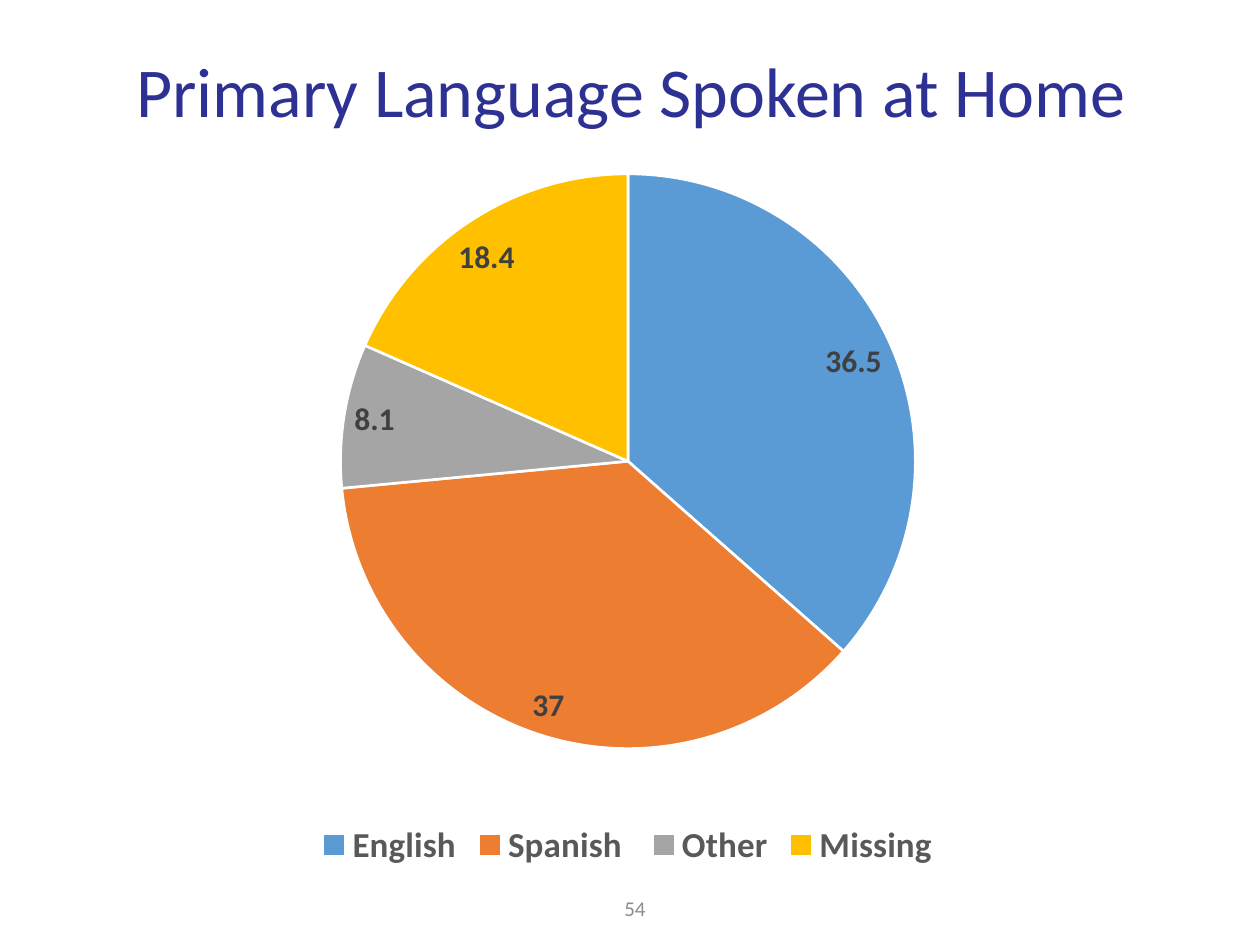
from lxml.etree import SubElement
from pptx import Presentation
from pptx.chart.data import CategoryChartData
from pptx.dml.color import RGBColor
from pptx.enum.chart import XL_CHART_TYPE, XL_LABEL_POSITION, XL_LEGEND_POSITION
from pptx.enum.text import MSO_ANCHOR, PP_ALIGN
from pptx.oxml.ns import qn
from pptx.util import Pt

PX = 914400 / 126
FONT = "Calibri"
NAVY = RGBColor(0x2D, 0x31, 0x93)
GREY = RGBColor(0x8C, 0x8C, 0x8C)
LEGEND_GREY = RGBColor(0x59, 0x59, 0x59)
LABEL_GREY = RGBColor(0x40, 0x40, 0x40)
WHITE = RGBColor(0xFF, 0xFF, 0xFF)
LANGUAGES = (
    ("English", 36.5, RGBColor(0x5B, 0x9B, 0xD5)),
    ("Spanish ", 37, RGBColor(0xED, 0x7D, 0x31)),
    ("Other", 8.1, RGBColor(0xA5, 0xA5, 0xA5)),
    ("Missing", 18.4, RGBColor(0xFF, 0xC0, 0x00)),
)


def scale(*lengths):
    """Turn px lengths into EMU."""
    return [round(length * PX) for length in lengths]


def set_font(font, size, color, bold=False):
    """Format a font."""
    font.name, font.size, font.bold = FONT, Pt(size), bold
    font.color.rgb = color


def write(shape, text, size, color, align, spacing=1.0):
    """Write one vertically centred paragraph into a shape."""
    frame = shape.text_frame
    frame.word_wrap = True
    frame.vertical_anchor = MSO_ANCHOR.MIDDLE
    para = frame.paragraphs[0]
    para.alignment = align
    para.line_spacing = spacing
    span = para.add_run()
    span.text = text
    set_font(span.font, size, color)


def add_title(page, left, top, width, height):
    """Place and fill the title placeholder."""
    title = page.shapes.title
    title.left, title.top, title.width, title.height = scale(left, top, width, height)
    write(title, "Primary Language Spoken at Home ", size=40, color=NAVY,
          align=PP_ALIGN.CENTER, spacing=0.9)


def add_page_number(page, left, top, width, height):
    """Add the page number."""
    box = page.shapes.add_textbox(*scale(left, top, width, height))
    write(box, "54", size=12, color=GREY, align=PP_ALIGN.RIGHT)


def set_plot_area(chart, **fractions):
    """Fix the inner plot area as fractions of the chart."""
    plot_area = chart.plots[0]._element.getparent()
    layout = plot_area.find(qn("c:layout"))
    if layout is None:
        layout = SubElement(plot_area, qn("c:layout"))
        plot_area.insert(0, layout)
    manual = SubElement(layout, qn("c:manualLayout"))
    settings = {"layoutTarget": "inner", "xMode": "edge", "yMode": "edge", **fractions}
    for name, value in settings.items():
        SubElement(manual, qn(f"c:{name}")).set("val", str(value))


def add_language_pie(page, left, top, width, height):
    """Add the pie of languages with value labels and a legend."""
    names, values, colors = zip(*LANGUAGES)
    data = CategoryChartData()
    data.categories = names
    data.add_series("Series 1", values)
    chart = page.shapes.add_chart(
        XL_CHART_TYPE.PIE, *scale(left, top, width, height), data).chart
    chart.has_title = False
    chart.font.name, chart.font.size = FONT, Pt(10)
    chart.has_legend = True
    chart.legend.position = XL_LEGEND_POSITION.BOTTOM
    chart.legend.include_in_layout = False
    set_font(chart.legend.font, 20, LEGEND_GREY, bold=True)

    plot = chart.plots[0]
    plot.vary_by_categories = True
    plot.has_data_labels = True
    labels = plot.data_labels
    labels.show_value = True
    labels.show_percentage = False
    labels.position = XL_LABEL_POSITION.BEST_FIT
    set_font(labels.font, 18, LABEL_GREY, bold=True)
    for index, color in enumerate(colors):
        slice_format = plot.series[0].points[index].format
        slice_format.fill.solid()
        slice_format.fill.fore_color.rgb = color
        slice_format.line.color.rgb = WHITE
        slice_format.line.width = Pt(1.5)
    set_plot_area(chart, x=0.26, y=0.05, w=0.48, h=0.78)


def main():
    """Build and save the deck."""
    deck = Presentation()
    deck.slide_width, deck.slide_height = scale(1260, 945)
    page = deck.slides.add_slide(deck.slide_layouts[5])
    add_title(page, 96, 3, 1086, 183)
    add_page_number(page, 374, 883, 284, 50)
    add_language_pie(page, 25, 137, 1206, 737)
    deck.save("out.pptx")


if __name__ == "__main__":
    main()
